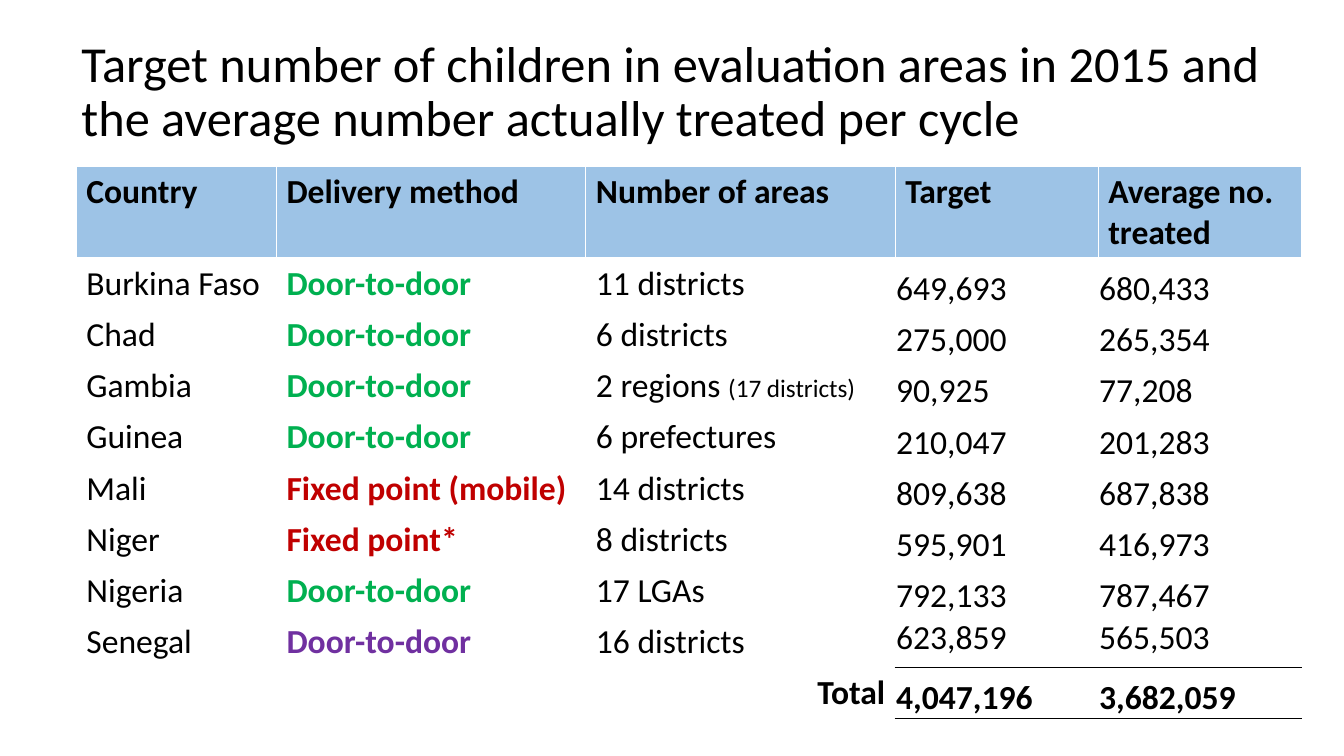
from lxml.etree import SubElement
from pptx import Presentation
from pptx.dml.color import RGBColor
from pptx.enum.text import MSO_ANCHOR, MSO_AUTO_SIZE, PP_ALIGN
from pptx.oxml.ns import qn
from pptx.util import Pt

COLORS = {"text": "000000", "paper": "FFFFFF", "header": "9DC3E6", "rule": "000000",
          "door": "00B050", "fixed": "C00000", "senegal": "7030A0"}
TITLE = ("Target number of children in evaluation areas in 2015 and "
         "the average number actually treated per cycle")
HEADER = ["Country", "Delivery method", "Number of areas", "Target", "Average no. treated"]
COUNTRIES = [
    ["Burkina Faso", "Door-to-door", "11 districts", "649,693", "680,433"],
    ["Chad", "Door-to-door", "6 districts", "275,000", "265,354"],
    ["Gambia", "Door-to-door", "2 regions (17 districts)", "90,925", "77,208"],
    ["Guinea", "Door-to-door", "6 prefectures", "210,047", "201,283"],
    ["Mali", "Fixed point (mobile)", "14 districts", "809,638", "687,838"],
    ["Niger", "Fixed point*", "8 districts", "595,901", "416,973"],
    ["Nigeria", "Door-to-door", "17 LGAs", "792,133", "787,467"],
    ["Senegal", "Door-to-door", "16 districts", "623,859", "565,503"],
]
TOTAL = ["", "", "Total", "4,047,196", "3,682,059"]
COLUMN_WIDTHS = [143, 221, 221, 145, 145]
HEADER_HEIGHT, ROW_HEIGHT = 65, 36.5
METHOD, AREAS, TARGET = 1, 2, 3
NUMBER_CELL = {"margin_left": Pt(0.7), "margin_right": Pt(0.7),
               "margin_top": Pt(0.7), "margin_bottom": Pt(0)}


def apply(target, formats):
    for name, value in formats.items():
        setattr(target, name, value)


def add_span(para, text, size=24, bold=False, color="text"):
    span = para.add_run()
    span.text = text
    apply(span.font, {"name": "Calibri", "size": Pt(size), "bold": bold})
    span.font.color.rgb = RGBColor.from_string(COLORS[color])


def set_borders(cell, top, bottom, bottom_width):
    """Draw white side borders and the given top and bottom borders."""
    properties = cell._tc.get_or_add_tcPr()
    sides = [("a:lnL", "paper", 1), ("a:lnR", "paper", 1),
             ("a:lnT", top, 1), ("a:lnB", bottom, bottom_width)]
    for index, (tag, color, width) in enumerate(sides):
        line = SubElement(properties, qn(tag), w=str(Pt(width)))
        fill = SubElement(line, qn("a:solidFill"))
        SubElement(fill, qn("a:srgbClr"), val=COLORS[color])
        properties.insert(index, line)


def method_color(country, method):
    if country == "Senegal":
        return "senegal"
    return "door" if method.startswith("Door") else "fixed"


def fill_cell(cell, row, column, values):
    header, total = row == 0, row == len(COUNTRIES) + 1
    last_country = row == len(COUNTRIES)
    number = column >= TARGET
    cell.fill.solid()
    cell.fill.fore_color.rgb = RGBColor.from_string(COLORS["header" if header else "paper"])
    set_borders(cell,
                "rule" if number and total else "paper",
                "rule" if number and (total or last_country) else "paper",
                3 if header else 1)
    if number and not header:
        apply(cell, NUMBER_CELL)
        cell.vertical_anchor = MSO_ANCHOR.TOP if last_country else MSO_ANCHOR.BOTTOM
    text = values[column]
    if not text:
        return
    para = cell.text_frame.paragraphs[0]
    if header or total:
        add_span(para, text, bold=True)
        if total and column == AREAS:
            para.alignment = PP_ALIGN.RIGHT
    elif column == METHOD:
        add_span(para, text, bold=True, color=method_color(values[0], text))
    else:
        main, bracket, note = text.partition("(")
        add_span(para, main)
        if bracket:
            add_span(para, bracket + note, size=18)


def add_title(page, left, top, width, height):
    title = page.shapes.title
    apply(title, {"left": Pt(left), "top": Pt(top), "width": Pt(width), "height": Pt(height)})
    apply(title.text_frame, {"word_wrap": True, "auto_size": MSO_AUTO_SIZE.NONE,
                             "vertical_anchor": MSO_ANCHOR.MIDDLE})
    para = title.text_frame.paragraphs[0]
    apply(para, {"alignment": PP_ALIGN.LEFT, "line_spacing": 0.9})
    add_span(para, TITLE, size=36)


def add_treatment_table(page, left, top):
    rows = [HEADER, *COUNTRIES, TOTAL]
    heights = [HEADER_HEIGHT] + [ROW_HEIGHT] * (len(rows) - 1)
    table = page.shapes.add_table(len(rows), len(HEADER), Pt(left), Pt(top),
                                  Pt(sum(COLUMN_WIDTHS)), Pt(sum(heights))).table
    table.horz_banding = False
    for column, width in zip(table.columns, COLUMN_WIDTHS):
        column.width = Pt(width)
    for row, (values, height) in enumerate(zip(rows, heights)):
        table.rows[row].height = Pt(height)
        for column in range(len(values)):
            fill_cell(table.cell(row, column), row, column, values)


def main():
    deck = Presentation()
    apply(deck, {"slide_width": Pt(960), "slide_height": Pt(540)})
    page = deck.slides.add_slide(deck.slide_layouts[5])
    add_title(page, 51, 0, 857, 133)
    add_treatment_table(page, 54.5, 119)
    deck.save("out.pptx")


if __name__ == "__main__":
    main()
